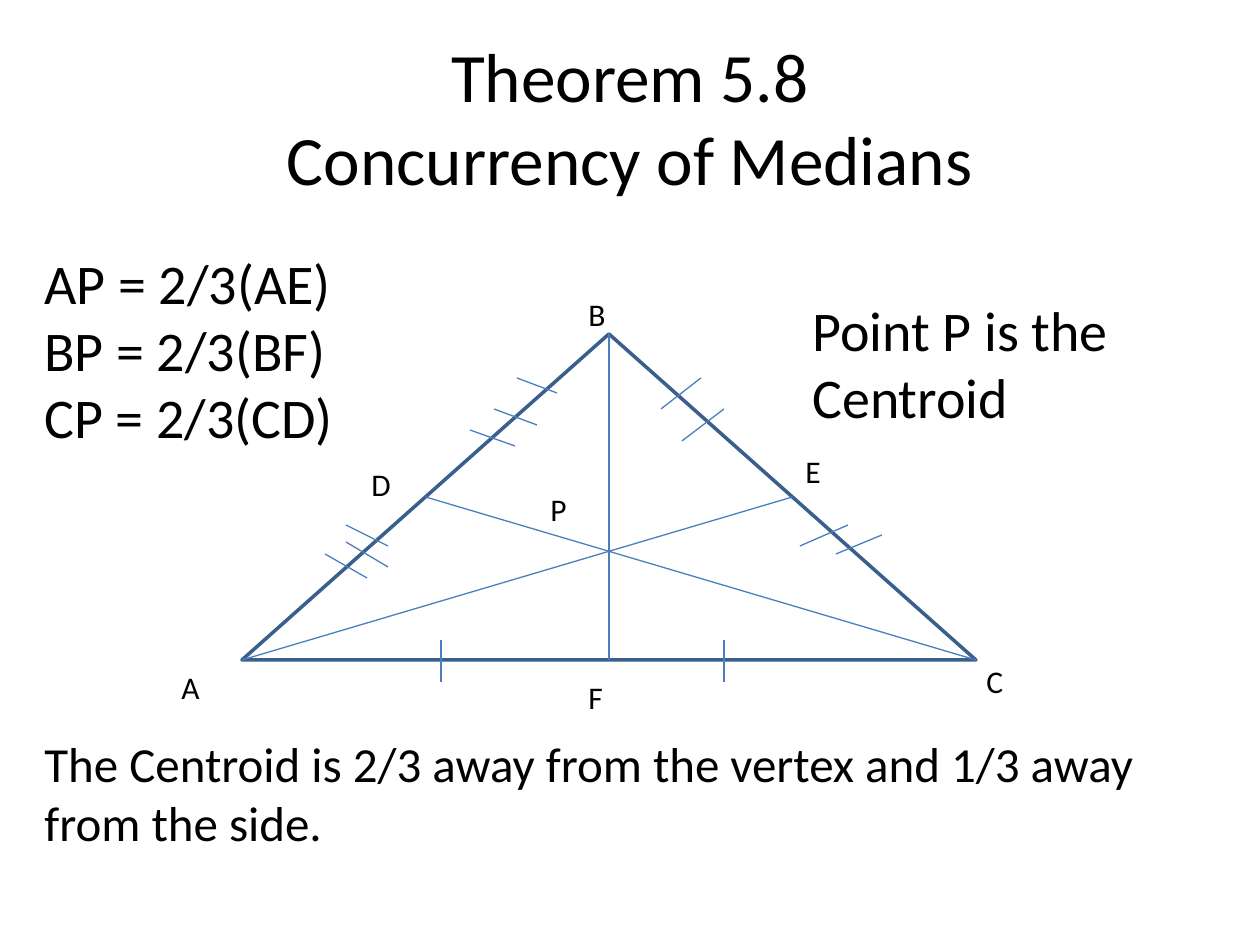
from pptx import Presentation
from pptx.dml.color import RGBColor
from pptx.enum.shapes import MSO_CONNECTOR, MSO_SHAPE
from pptx.enum.text import MSO_ANCHOR, MSO_AUTO_SIZE, PP_ALIGN
from pptx.util import Emu, Pt
from lxml import etree

SCALE = 914400 // 126
NS = "http://schemas.openxmlformats.org/drawingml/2006/main"
WIDE, HIGH = 1260, 945

TITLE = ["Theorem 5.8\vConcurrency of Medians"]
TITLE_BOX = (63, 38, 1134, 157)

# lines of text, box (left, top, width, height), size
NOTES = [
    (["AP = 2/3(AE)", "BP = 2/3(BF)", "CP = 2/3(CD)"], (32, 242, 373, 217), 32),
    (["Point P is the Centroid"], (800, 289, 365, 149), 32),
    (["The Centroid is 2/3 away from the vertex and 1/3 away from the side."],
     (32, 727, 1197, 131), 28),
]
LABELS = {
    "B": (576, 289), "E": (793, 446), "P": (538, 484), "D": (359, 459),
    "A": (169, 662), "F": (576, 672), "C": (974, 656),
}
LABEL_SIZE = (67, 52)

A, B, C = (242, 660), (609, 334), (976, 660)

# tick marks on each half side: start and end
TICKS = [
    ((441, 640), (441, 682)),  # AF
    ((724, 640), (724, 682)),  # FC
    ((661, 409), (701, 378)), ((682, 441), (724, 409)),  # BE
    ((800, 546), (848, 525)), ((836, 554), (882, 535)),  # EC
    ((470, 430), (515, 446)), ((494, 409), (537, 425)), ((517, 378), (557, 393)),  # DB
    ((346, 525), (388, 546)), ((346, 542), (388, 567)), ((325, 554), (367, 578)),  # AD
]


def px(*values):
    return [Emu(round(v * SCALE)) for v in values]


def color(code):
    return RGBColor.from_string(code)


def middle(p, q):
    return (p[0] + q[0]) / 2, (p[1] + q[1]) / 2


def add_text(slide, lines, box, size, align=PP_ALIGN.LEFT,
             anchor=MSO_ANCHOR.TOP, fit=MSO_AUTO_SIZE.SHAPE_TO_FIT_TEXT):
    frame = slide.shapes.add_textbox(*px(*box)).text_frame
    for name, value in {"word_wrap": True, "auto_size": fit,
                        "vertical_anchor": anchor}.items():
        setattr(frame, name, value)
    frame.text = "\n".join(lines)
    for para in frame.paragraphs:
        para.alignment = align
        for run in para.runs:
            for name, value in {"name": "Calibri", "size": Pt(size)}.items():
                setattr(run.font, name, value)
            run.font.color.rgb = color("000000")


def add_line(slide, start, end):
    line = slide.shapes.add_connector(MSO_CONNECTOR.STRAIGHT, *px(*start, *end))
    line.line.color.rgb = color("4B7EBC")
    line.line.width = Pt(0.75)
    etree.SubElement(line._element.spPr, f"{{{NS}}}effectLst")


def main():
    deck = Presentation()
    deck.slide_width, deck.slide_height = px(WIDE, HIGH)
    slide = deck.slides.add_slide(deck.slide_layouts[6])

    add_text(slide, TITLE, TITLE_BOX, 39.6, PP_ALIGN.CENTER,
             MSO_ANCHOR.MIDDLE, MSO_AUTO_SIZE.NONE)

    shape = slide.shapes.add_shape(
        MSO_SHAPE.ISOSCELES_TRIANGLE,
        *px(A[0], B[1], C[0] - A[0], A[1] - B[1]))
    shape.shadow.inherit = False
    shape.fill.background()
    shape.line.color.rgb = color("3A5F8C")
    shape.line.width = Pt(2)

    for top, left, right in [(B, A, C), (A, B, C), (C, A, B)]:
        add_line(slide, top, middle(left, right))
    for start, end in TICKS:
        add_line(slide, start, end)

    for label, place in LABELS.items():
        add_text(slide, [label], place + LABEL_SIZE, 18)
    for lines, box, size in NOTES:
        add_text(slide, lines, box, size)

    deck.save("out.pptx")


if __name__ == "__main__":
    main()
